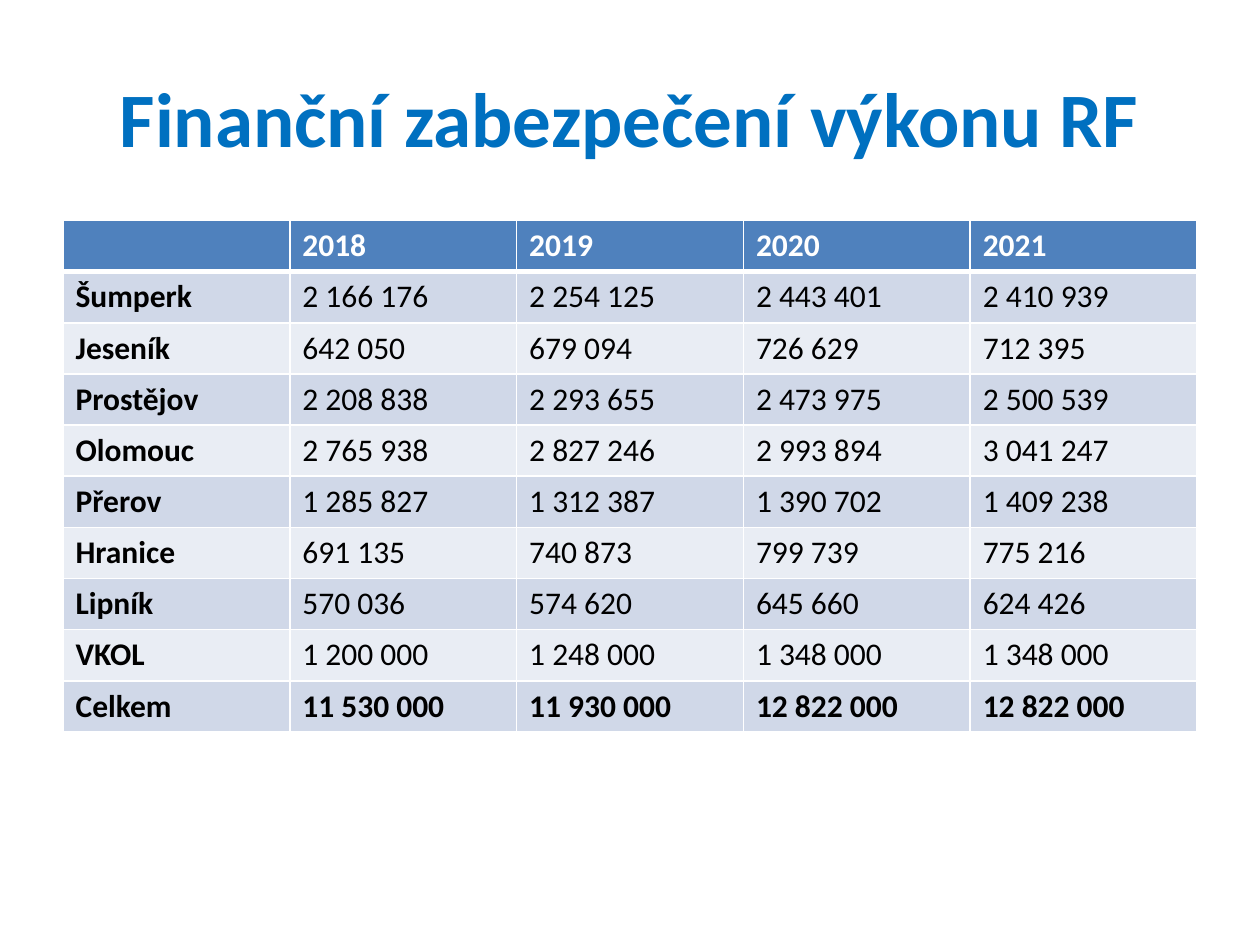
from dataclasses import dataclass

from lxml import etree
from pptx import Presentation, util as u
from pptx.dml.color import RGBColor
from pptx.enum import text
from pptx.oxml.ns import qn

WIDTH, HEIGHT = u.Inches(10), u.Inches(7.5)
MARGIN = 0.05  # share of the slide's width
FONT = "Calibri"
WHITE, BLACK, TITLE_BLUE = "FFFFFF", "000000", "0070C0"
HEADER_FILL, BAND_FILLS = "4F81BD", ("D0D8E8", "E9EDF4")
THIN, THICK = 1, 3  # border widths in points

YEARS = ("2018", "2019", "2020", "2021")


@dataclass(frozen=True)
class Region:
    name: str
    amounts: tuple[str, ...]
    is_total: bool = False


REGIONS = (
    Region("Šumperk", ("2 166 176", "2 254 125", "2 443 401", "2 410 939")),
    Region("Jeseník", ("642 050", "679 094", "726 629", "712 395")),
    Region("Prostějov", ("2 208 838", "2 293 655", "2 473 975", "2 500 539")),
    Region("Olomouc", ("2 765 938", "2 827 246", "2 993 894", "3 041 247")),
    Region("Přerov", ("1 285 827", "1 312 387", "1 390 702", "1 409 238")),
    Region("Hranice", ("691 135", "740 873", "799 739", "775 216")),
    Region("Lipník", ("570 036", "574 620", "645 660", "624 426")),
    Region("VKOL", ("1 200 000", "1 248 000", "1 348 000", "1 348 000")),
    Region("Celkem", ("11 530 000", "11 930 000", "12 822 000", "12 822 000"), is_total=True),
)


def color(value: str) -> RGBColor:
    return RGBColor.from_string(value)


def add_run(paragraph, words: str, size: float, ink: str, bold: bool) -> None:
    run = paragraph.add_run()
    run.text = words
    run.font.name = FONT
    run.font.size = u.Pt(size)
    run.font.bold = bold
    run.font.color.rgb = color(ink)


def add_borders(cell, top: float, bottom: float) -> None:
    """Draw white borders; call before filling, as lines precede the fill in the XML."""
    properties = cell._tc.get_or_add_tcPr()
    for side, points in (("L", THIN), ("R", THIN), ("T", top), ("B", bottom)):
        line = etree.SubElement(properties, qn(f"a:ln{side}"), w=str(u.Pt(points)))
        fill = etree.SubElement(line, qn("a:solidFill"))
        etree.SubElement(fill, qn("a:srgbClr"), val=WHITE)


def fill_cell(cell, words: str, fill: str, ink: str, bold: bool,
              top: float = THIN, bottom: float = THIN) -> None:
    add_borders(cell, top, bottom)
    cell.fill.solid()
    cell.fill.fore_color.rgb = color(fill)
    paragraph = cell.text_frame.paragraphs[0]
    if words:
        add_run(paragraph, words, 18, ink, bold)
    else:
        paragraph.font.size = u.Pt(18)


def add_title(slide, words: str) -> None:
    shape = slide.shapes.add_textbox(
        int(WIDTH * MARGIN), int(HEIGHT * 0.04), int(WIDTH * (1 - 2 * MARGIN)), u.Inches(1.25))
    frame = shape.text_frame
    frame.word_wrap = True
    frame.vertical_anchor = text.MSO_ANCHOR.MIDDLE
    paragraph = frame.paragraphs[0]
    paragraph.alignment = text.PP_ALIGN.CENTER
    add_run(paragraph, words, 44, TITLE_BLUE, True)


def add_funding_table(slide) -> None:
    table = slide.shapes.add_table(
        len(REGIONS) + 1, len(YEARS) + 1, int(WIDTH * MARGIN), u.Inches(1.75),
        int(WIDTH * (1 - 2 * MARGIN)), u.Inches(4.06)).table
    for column, year in enumerate(("", *YEARS)):
        fill_cell(table.cell(0, column), year, HEADER_FILL, WHITE, True, bottom=THICK)
    for row, region in enumerate(REGIONS, start=1):
        band = BAND_FILLS[(row - 1) % 2]
        for column, words in enumerate((region.name, *region.amounts)):
            fill_cell(table.cell(row, column), words, band, BLACK,
                      bold=column == 0 or region.is_total,
                      top=THICK if row == 1 else THIN)


def main() -> None:
    presentation = Presentation()
    presentation.slide_width, presentation.slide_height = WIDTH, HEIGHT
    slide = presentation.slides.add_slide(presentation.slide_layouts[6])
    add_title(slide, "Finanční zabezpečení výkonu RF")
    add_funding_table(slide)
    presentation.save("out.pptx")


if __name__ == "__main__":
    main()
